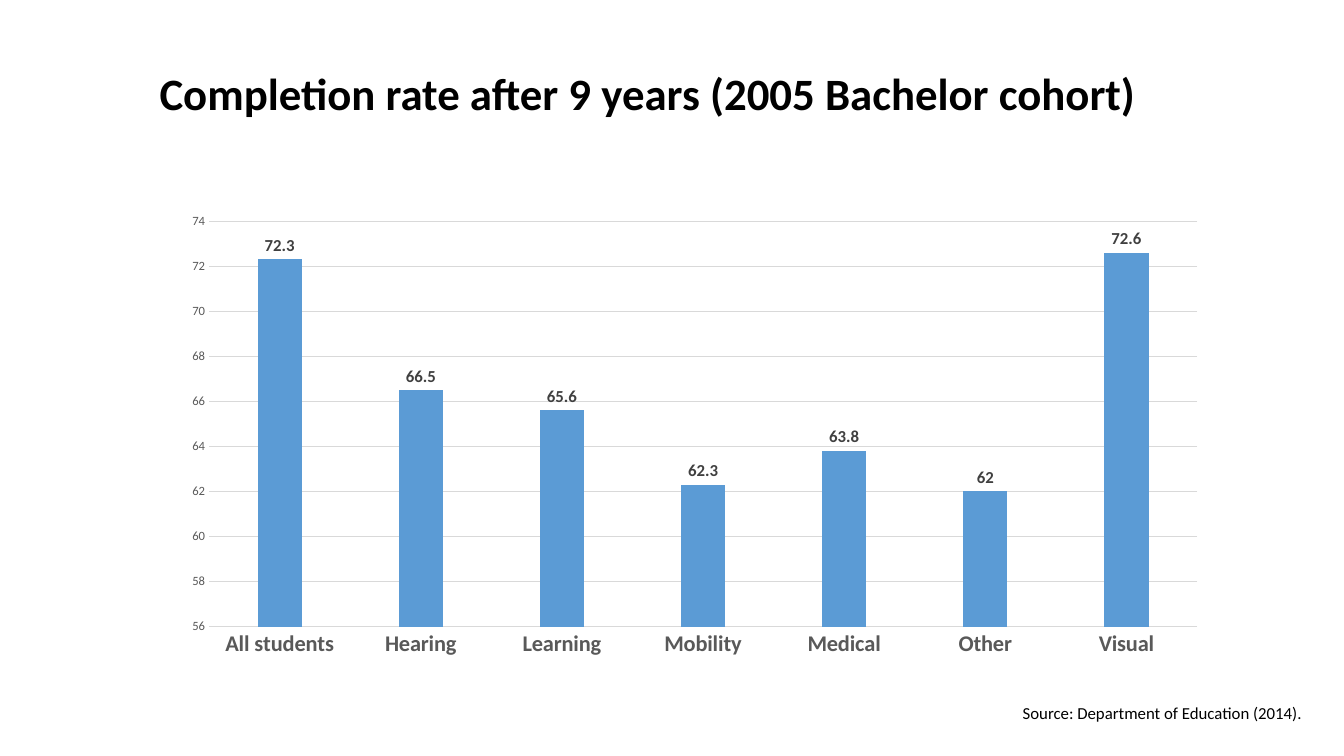
from pptx import Presentation
from pptx.chart.data import CategoryChartData
from pptx.dml.color import RGBColor
from pptx.enum.chart import XL_CHART_TYPE as ChartType, XL_LABEL_POSITION as LabelPos, XL_TICK_MARK as Tick
from pptx.enum.text import MSO_AUTO_SIZE as AutoSize, PP_ALIGN as Align
from pptx.util import Inches, Pt

RATES = {
    "All students": 72.3,
    "Hearing": 66.5,
    "Learning": 65.6,
    "Mobility": 62.3,
    "Medical": 63.8,
    "Other": 62,
    "Visual": 72.6,
}
TEXTS = [
    ("Completion rate after 9 years (2005 Bachelor cohort)",
     (1.32, 0.6, 10.21, 0.64), 32, True, Align.CENTER, True),
    ("Source: Department of Education (2014). ",
     (10.01, 6.92, 3.04, 0.3), 12, False, Align.RIGHT, False),
]
CHART_BOX = (1.7, 2.03, 10.38, 4.59)
BAR, GRID, AXIS_TEXT, LABEL_TEXT, BLACK = "5B9BD5", "D9D9D9", "595959", "404040", "000000"


def rgb(value):
    return RGBColor.from_string(value)


def set_font(font, size, color, bold=False):
    for name, value in {"name": "Calibri", "size": Pt(size), "bold": bold}.items():
        setattr(font, name, value)
    font.color.rgb = rgb(color)


def set_line(line):
    line.color.rgb = rgb(GRID)
    line.width = Pt(0.75)


def add_text(s, text, box, size, bold, align, wrap):
    tf = s.shapes.add_textbox(*map(Inches, box)).text_frame
    tf.word_wrap = wrap
    tf.auto_size = AutoSize.SHAPE_TO_FIT_TEXT
    p = tf.paragraphs[0]
    p.alignment = align
    r = p.add_run()
    r.text = text
    set_font(r.font, size, BLACK, bold)


def add_rate_chart(s):
    data = CategoryChartData()
    data.categories = list(RATES)
    data.add_series("Series 1", list(RATES.values()))
    chart = s.shapes.add_chart(
        ChartType.COLUMN_CLUSTERED, *map(Inches, CHART_BOX), data).chart
    chart.has_legend = chart.has_title = False
    set_font(chart.font, 10, BLACK)

    plot = chart.plots[0]
    for name, value in {"gap_width": 219, "overlap": -27,
                        "vary_by_categories": False}.items():
        setattr(plot, name, value)
    series = plot.series[0]
    series.format.fill.solid()
    series.format.fill.fore_color.rgb = rgb(BAR)
    labels = series.data_labels
    labels.show_value = True
    labels.position = LabelPos.OUTSIDE_END
    set_font(labels.font, 12, LABEL_TEXT, True)

    cat, val = chart.category_axis, chart.value_axis
    for axis, size, bold in ((cat, 16, True), (val, 9, False)):
        axis.major_tick_mark = axis.minor_tick_mark = Tick.NONE
        set_font(axis.tick_labels.font, size, AXIS_TEXT, bold)
    cat.has_major_gridlines = False
    set_line(cat.format.line)
    for name, value in {"minimum_scale": 56, "maximum_scale": 74, "major_unit": 2,
                        "has_major_gridlines": True}.items():
        setattr(val, name, value)
    val.format.line.fill.background()
    set_line(val.major_gridlines.format.line)


def main():
    prs = Presentation()
    prs.slide_width, prs.slide_height = Inches(13.33), Inches(7.5)
    s = prs.slides.add_slide(prs.slide_layouts[6])
    add_rate_chart(s)
    for item in TEXTS:
        add_text(s, *item)
    prs.save("out.pptx")


if __name__ == "__main__":
    main()
